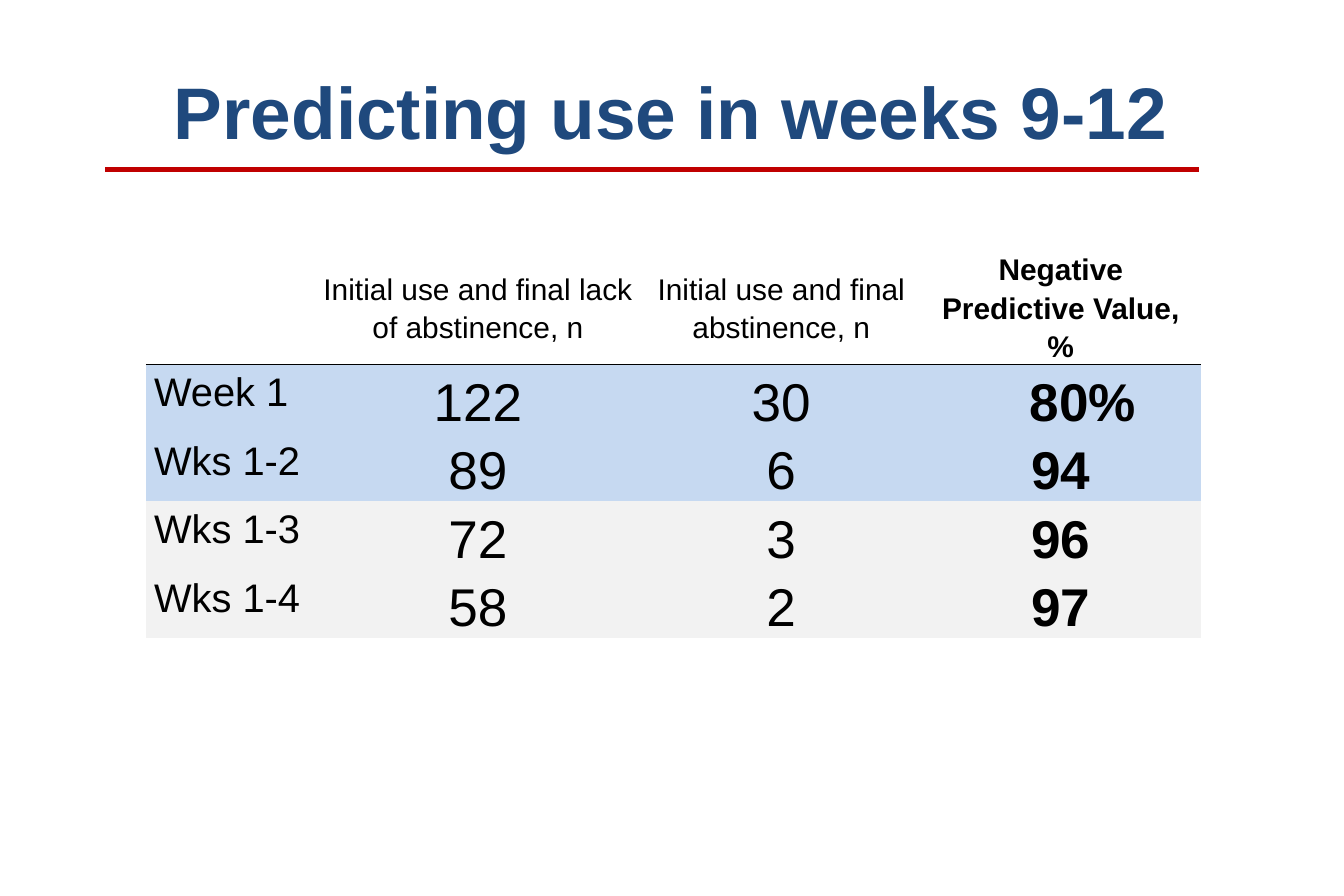
from dataclasses import dataclass

from lxml import etree
from pptx import Presentation
from pptx.dml.color import RGBColor
from pptx.enum.shapes import MSO_CONNECTOR
from pptx.enum.text import MSO_ANCHOR, PP_ALIGN
from pptx.oxml import parse_xml
from pptx.oxml.ns import qn
from pptx.util import Inches, Pt

LEFT, CENTER = PP_ALIGN.LEFT, PP_ALIGN.CENTER
TOP, MIDDLE = MSO_ANCHOR.TOP, MSO_ANCHOR.MIDDLE
STRAIGHT = MSO_CONNECTOR.STRAIGHT
PLAIN_TABLE_STYLE = "{2D5ABB26-0587-4C30-8999-92F81FD0307C}"


@dataclass(frozen=True)
class Theme:
    font: str = "Arial"
    title: str = "1F497D"
    rule: str = "C00000"
    text: str = "000000"
    early_weeks: str = "C6D9F1"
    later_weeks: str = "F2F2F2"
    title_size: int = 44
    header_size: int = 18
    label_size: int = 24
    value_size: int = 32


THEME = Theme()
HEADERS = ["", "Initial use and final lack of abstinence, n",
           "Initial use and final abstinence, n", "Negative Predictive Value, %"]
RESULTS = [
    ("Week 1", "122", "30", "80%"),
    ("Wks 1-2", "89", "6", "94"),
    ("Wks 1-3", "72", "3", "96"),
    ("Wks 1-4", "58", "2", "97"),
]
COLUMN_WIDTHS = [1.41, 2.74, 2.34, 2.34]
HEADER_HEIGHT = 0.97
PERCENT_INDENT = 0.37


def style_font(font, size, color, bold):
    font.name = THEME.font
    font.size = Pt(size)
    font.bold = bold
    font.color.rgb = RGBColor.from_string(color)


def add_title(slide, left, top, width, height):
    title = slide.shapes.title
    title.left, title.top = Inches(left), Inches(top)
    title.width, title.height = Inches(width), Inches(height)
    title.text_frame.text = "Predicting use in weeks 9-12"
    title.text_frame.vertical_anchor = MIDDLE
    paragraph = title.text_frame.paragraphs[0]
    paragraph.alignment = CENTER
    style_font(paragraph.font, THEME.title_size, THEME.title, True)


def add_rule(slide, left, top, width):
    rule = slide.shapes.add_connector(
        STRAIGHT, Inches(left), Inches(top), Inches(left + width), Inches(top))
    rule.line.color.rgb = RGBColor.from_string(THEME.rule)
    rule.line.width = Pt(3)
    etree.SubElement(rule._element.spPr, qn("a:effectLst"))


def write_cell(cell, text, size, bold=False, alignment=CENTER, anchor=MIDDLE):
    cell.margin_left = cell.margin_right = Inches(0.07)
    cell.margin_top = cell.margin_bottom = 0
    cell.vertical_anchor = anchor
    cell.text = text
    paragraph = cell.text_frame.paragraphs[0]
    paragraph.alignment = alignment
    paragraph.line_spacing = 1.15
    style_font(paragraph.font, size, THEME.text, bold)


def add_bottom_border(cell):
    border = parse_xml(
        '<a:lnB xmlns:a="http://schemas.openxmlformats.org/drawingml/2006/main" '
        f'w="{Pt(1)}"><a:solidFill><a:srgbClr val="{THEME.text}"/></a:solidFill></a:lnB>')
    cell._tc.get_or_add_tcPr().insert(0, border)


def add_results_table(slide, left, top, width, height):
    table = slide.shapes.add_table(
        len(RESULTS) + 1, len(HEADERS),
        Inches(left), Inches(top), Inches(width), Inches(height)).table
    table.horz_banding = False
    table._tbl.tblPr.find(qn("a:tableStyleId")).text = PLAIN_TABLE_STYLE
    for column, share in zip(table.columns, COLUMN_WIDTHS):
        column.width = Inches(width * share / sum(COLUMN_WIDTHS))
    row_height = (height - HEADER_HEIGHT) / len(RESULTS)
    for index, row in enumerate(table.rows):
        row.height = Inches(row_height if index else HEADER_HEIGHT)

    last = len(HEADERS) - 1
    for column, header in enumerate(HEADERS):
        cell = table.cell(0, column)
        write_cell(cell, header, THEME.header_size, column == last)
        cell.fill.background()
        add_bottom_border(cell)

    for row, result in enumerate(RESULTS, start=1):
        band = THEME.early_weeks if row <= 2 else THEME.later_weeks
        for column, text in enumerate(result):
            cell = table.cell(row, column)
            if column == 0:
                write_cell(cell, text, THEME.label_size, alignment=LEFT, anchor=TOP)
            else:
                write_cell(cell, text, THEME.value_size, column == last)
            cell.fill.solid()
            cell.fill.fore_color.rgb = RGBColor.from_string(band)
            if text.endswith("%"):
                cell.margin_left += Inches(PERCENT_INDENT)


def main():
    presentation = Presentation()
    presentation.slide_width = Inches(11.25)
    presentation.slide_height = Inches(7.5)
    slide = presentation.slides.add_slide(presentation.slide_layouts[5])
    add_title(slide, 0.56, 0.3, 10.12, 1.25)
    add_results_table(slide, 1.22, 2.08, 8.83, 3.25)
    add_rule(slide, 0.88, 1.42, 9.16)
    presentation.save("out.pptx")


if __name__ == "__main__":
    main()
